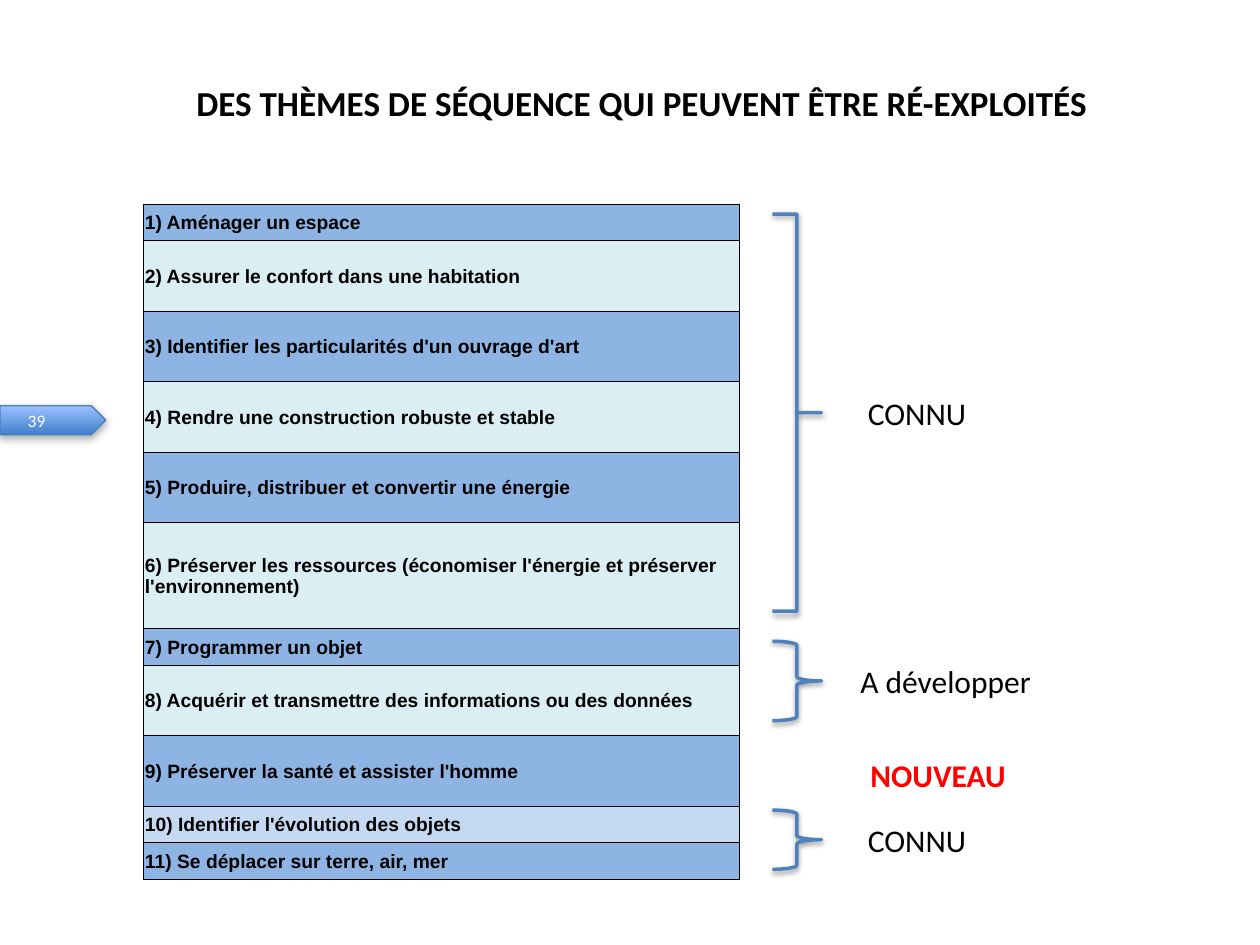
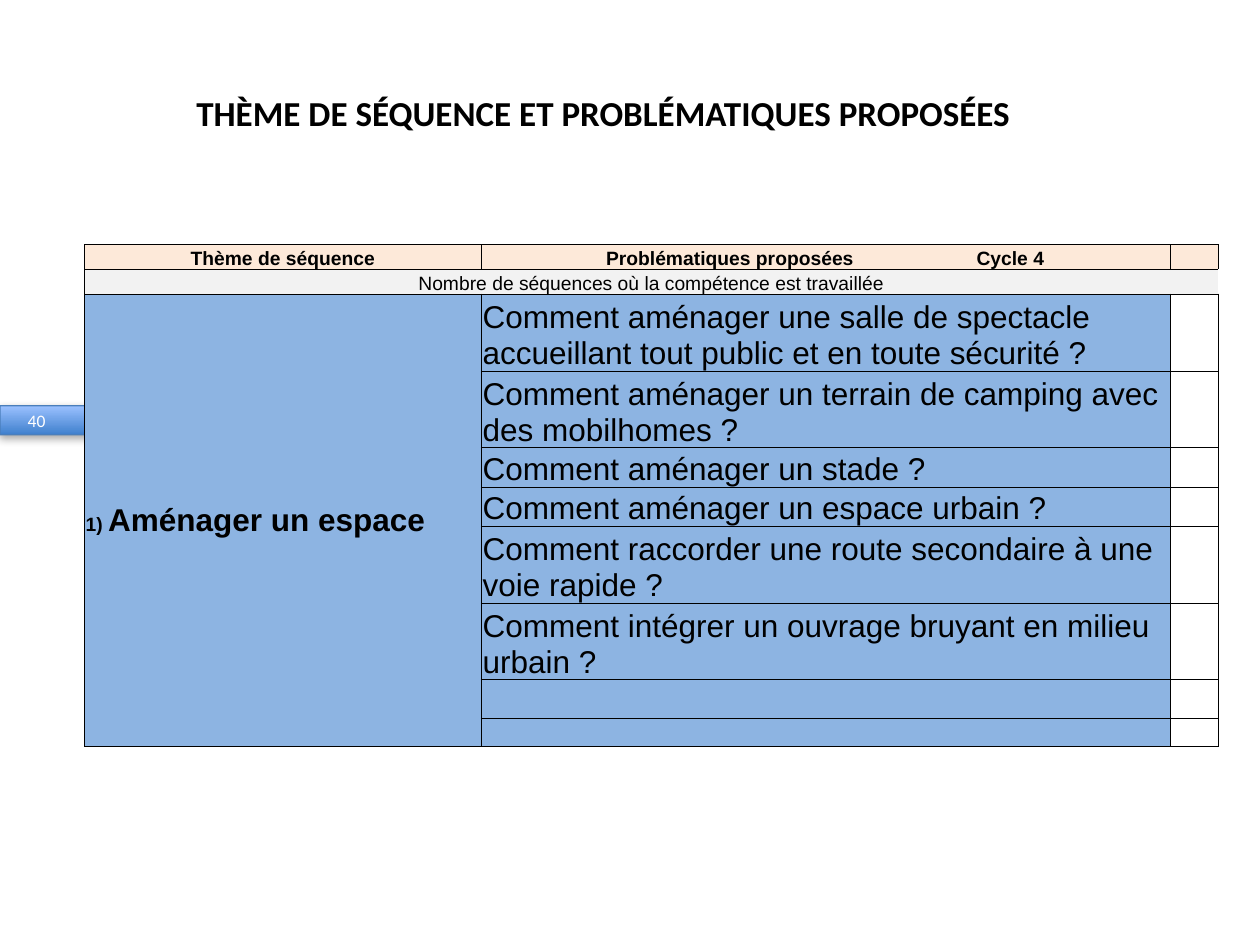
from dataclasses import dataclass

from lxml import etree
from pptx import Presentation
from pptx import util as u
from pptx.dml.color import RGBColor
from pptx.enum import shapes, text
from pptx.oxml import ns

# Grid: 100 columns by 75 rows, square cells
COLUMNS, ROWS = 100, 75
WIDTH, HEIGHT = u.Inches(10), u.Inches(7.5)
COLUMN, ROW = WIDTH / COLUMNS, HEIGHT / ROWS

BLACK = RGBColor(0x00, 0x00, 0x00)
WHITE = RGBColor(0xFF, 0xFF, 0xFF)
RED = RGBColor(0xFF, 0x00, 0x00)
BLUE = RGBColor(0x8D, 0xB4, 0xE2)
PALE_BLUE = RGBColor(0xC5, 0xD9, 0xF1)
AQUA = RGBColor(0xDA, 0xEE, 0xF3)
PEACH = RGBColor(0xFD, 0xE9, 0xD9)
GREY = RGBColor(0xF2, 0xF2, 0xF2)
BRACE_BLUE = RGBColor(0x4F, 0x81, 0xBD)
TAG_LINE = RGBColor(0x4A, 0x7E, 0xBB)
TAG_DARK = RGBColor(0x3F, 0x80, 0xCD)
TAG_LIGHT = RGBColor(0x9B, 0xC1, 0xFF)

HEADING_FONT, TABLE_FONT = "Calibri", "Arial"
SMALL, LARGE = 11, 18
MIDDLE, BOTTOM = text.MSO_ANCHOR.MIDDLE, text.MSO_ANCHOR.BOTTOM
CENTER = text.PP_ALIGN.CENTER

THEMES = [
    # wording, height in rows, fill
    ("1) Aménager un espace", 2.9, BLUE),
    ("2) Assurer le confort dans une habitation", 5.6, AQUA),
    ("3) Identifier les particularités d'un ouvrage d'art", 5.6, BLUE),
    ("4) Rendre une construction robuste et stable", 5.6, AQUA),
    ("5) Produire, distribuer et convertir une énergie", 5.6, BLUE),
    ("6) Préserver les ressources (économiser l'énergie et préserver "
     "l'environnement)", 8.4, AQUA),
    ("7) Programmer un objet", 2.9, BLUE),
    ("8) Acquérir et transmettre des informations ou des données", 5.6, AQUA),
    ("9) Préserver la santé et assister l'homme", 5.6, BLUE),
    ("10) Identifier l'évolution des objets", 2.9, PALE_BLUE),
    ("11) Se déplacer sur terre, air, mer", 2.9, BLUE),
]
GROUPS = [
    # label, label left, brace top, brace height, brace curl
    ("CONNU", 6.6, 0.8, 31.5, 0),
    ("A développer", 6, 34.7, 6.3, 0.083),
    ("CONNU", 6.6, 48.1, 4.7, 0.083),
]
QUESTIONS = [
    # wording, height in rows
    ("Comment aménager une salle de spectacle accueillant tout public "
     "et en toute sécurité ?", 6.1),
    ("Comment aménager un terrain de camping avec des mobilhomes ?", 6.1),
    ("Comment aménager un stade ?", 3.1),
    ("Comment aménager un espace urbain ?", 3.1),
    ("Comment raccorder une route secondaire à une voie rapide ?", 6.1),
    ("Comment intégrer un ouvrage bruyant en milieu urbain ?", 6.1),
    ("", 3.1),
    ("", 2.2),
]


@dataclass
class Box:
    left: float
    top: float
    width: float
    height: float

    def inner(self, left, top, width, height):
        return Box(self.left + left, self.top + top, width, height)

    def lengths(self):
        return (u.Emu(int(self.left * COLUMN)), u.Emu(int(self.top * ROW)),
                u.Emu(int(self.width * COLUMN)), u.Emu(int(self.height * ROW)))


def add_span(para, wording, size, font=TABLE_FONT, color=BLACK, bold=False):
    span = para.add_run()
    span.text = wording
    span.font.size = u.Pt(size)
    span.font.name = font
    span.font.bold = bold
    span.font.color.rgb = color


def add_text(page, box, wording, size, color=BLACK, bold=False, grow=False):
    frame = page.shapes.add_textbox(*box.lengths()).text_frame
    frame.word_wrap = True
    if grow:
        frame.auto_size = text.MSO_AUTO_SIZE.SHAPE_TO_FIT_TEXT
    add_span(frame.paragraphs[0], wording, size, HEADING_FONT, color, bold)


def add_shadow(shape, opacity, blur, distance):
    shape.shadow.inherit = False
    effects = shape._element.spPr.find(ns.qn("a:effectLst"))
    shadow = etree.SubElement(
        effects, ns.qn("a:outerShdw"), blurRad=str(u.Pt(blur)),
        dist=str(u.Pt(distance)), dir="5400000", rotWithShape="0")
    tint = etree.SubElement(shadow, ns.qn("a:srgbClr"), val=str(BLACK))
    etree.SubElement(tint, ns.qn("a:alpha"), val=str(opacity * 1000))


# Tables
def add_grid(page, box, widths, heights):
    table = page.shapes.add_table(len(heights), len(widths),
                                  *box.lengths()).table
    table.first_row = table.horz_banding = False
    for column, width in zip(table.columns, widths):
        column.width = u.Emu(int(width * COLUMN))
    for row, height in zip(table.rows, heights):
        row.height = u.Emu(int(height * ROW))
    return table


def style_cell(cell, fill=None, spans=(), anchor=MIDDLE, align=None,
               sides="LRTB"):
    """Each span is (wording, size, bold)."""
    cell.margin_left = cell.margin_right = cell.margin_top = u.Inches(0.01)
    cell.margin_bottom = 0
    cell.vertical_anchor = anchor
    para = cell.text_frame.paragraphs[0]
    if align is not None:
        para.alignment = align
    for wording, size, bold in spans:
        add_span(para, wording, size, bold=bold)
    if not spans:  # keeps empty rows low
        etree.SubElement(para._p, ns.qn("a:endParaRPr"), sz=str(SMALL * 100))
    properties = cell._tc.get_or_add_tcPr()
    for side in sides:
        line = etree.SubElement(properties, ns.qn(f"a:ln{side}"),
                                w=str(u.Pt(0.5)))
        solid = etree.SubElement(line, ns.qn("a:solidFill"))
        etree.SubElement(solid, ns.qn("a:srgbClr"), val=str(BLACK))
    if fill is None:
        cell.fill.background()
    else:
        cell.fill.solid()
        cell.fill.fore_color.rgb = fill


# Parts shared by both slides
def add_page_tag(page, box, number):
    tag = page.shapes.add_shape(shapes.MSO_SHAPE.PENTAGON, *box.lengths())
    tag.fill.gradient()
    tag.fill.gradient_angle = 90
    for stop, color in zip(tag.fill.gradient_stops, (TAG_DARK, TAG_LIGHT)):
        stop.color.rgb = color
    tag.line.color.rgb = TAG_LINE
    tag.line.width = u.Pt(0.75)
    add_shadow(tag, 35, 5, 1.8)
    frame = tag.text_frame
    frame.margin_left = u.Inches(0.22)
    frame.margin_top = frame.margin_bottom = 0
    frame.vertical_anchor = MIDDLE
    para = frame.paragraphs[0]
    para.alignment = text.PP_ALIGN.LEFT
    add_span(para, str(number), 10, HEADING_FONT, WHITE)


def start_page(deck, number, title, title_box):
    page = deck.slides.add_slide(deck.slide_layouts[6])
    add_page_tag(page, Box(0, 32.2, 8.4, 2.3), number)
    add_text(page, title_box, title, 20, bold=True)
    return page


# First slide
def list_themes(page, box):
    table = add_grid(page, box, [box.width], [row[1] for row in THEMES])
    for index, (wording, _, fill) in enumerate(THEMES):
        style_cell(table.cell(index, 0), fill, [(wording, SMALL, True)])


def label_groups(page, box):
    label_height = 4
    for label, left, top, height, curl in GROUPS:
        brace = page.shapes.add_shape(shapes.MSO_SHAPE.RIGHT_BRACE,
                                      *box.inner(0, top, 3.9, height).lengths())
        brace.adjustments[0] = curl
        brace.adjustments[1] = 0.5
        brace.fill.background()
        brace.line.color.rgb = BRACE_BLUE
        brace.line.width = u.Pt(2)
        add_shadow(brace, 38, 3.1, 1.6)
        label_top = top + (height - label_height) / 2
        add_text(page, box.inner(left, label_top, 23.6, label_height),
                 label, LARGE, grow=True)
    add_text(page, box.inner(6.8, 43.3, 28.1, label_height),
             "NOUVEAU", LARGE, RED, bold=True, grow=True)


# Second slide
def list_questions(page, box):
    widths = [31.5, 54.7, 3.8]
    heights = [2, 1.9] + [height for _, height in QUESTIONS]
    table = add_grid(page, box, widths, heights)

    # Heading row, with the cycle set at a tab stop
    style_cell(table.cell(0, 0), PEACH, [("Thème de séquence", SMALL, True)],
               BOTTOM, CENTER)
    heading = table.cell(0, 1)
    para = heading.text_frame.paragraphs[0]
    stops = etree.SubElement(para._p.get_or_add_pPr(), ns.qn("a:tabLst"))
    etree.SubElement(stops, ns.qn("a:tab"), pos=str(u.Inches(2.94)), algn="l")
    style_cell(heading, PEACH,
               [("Problématiques proposées\tCycle 4", SMALL, True)], BOTTOM)
    heading.margin_left = u.Inches(0.99)
    style_cell(table.cell(0, 2), PEACH)

    # Band across the three columns
    table.cell(1, 0).merge(table.cell(1, 2))
    style_cell(table.cell(1, 0), GREY,
               [("Nombre de séquences où la compétence est travaillée",
                 SMALL, False)], BOTTOM, CENTER, "LTB")
    for column in (1, 2):
        style_cell(table.cell(1, column), GREY, sides="TB")

    # Theme beside its questions
    last = len(heights) - 1
    table.cell(2, 0).merge(table.cell(last, 0))
    style_cell(table.cell(2, 0), BLUE,
               [("1) ", SMALL, True), ("Aménager un espace", LARGE, True)])
    for index, (wording, _) in enumerate(QUESTIONS, start=2):
        if index > 2:
            style_cell(table.cell(index, 0), BLUE,
                       sides="LRB" if index == last else "LR")
        spans = [(wording, LARGE, False)] if wording else []
        style_cell(table.cell(index, 1), BLUE, spans, BOTTOM)
        style_cell(table.cell(index, 2))


def main():
    deck = Presentation()
    deck.slide_width, deck.slide_height = WIDTH, HEIGHT

    page = start_page(deck, 39,
                      "DES THÈMES DE SÉQUENCE QUI PEUVENT ÊTRE RÉ-EXPLOITÉS",
                      Box(14.6, 6, 80.3, 7.9))
    list_themes(page, Box(11.4, 16.2, 47.3, 53.5))
    label_groups(page, Box(61.3, 16.2, 34.9, 53.5))

    page = start_page(deck, 40,
                      "THÈME DE SÉQUENCE ET PROBLÉMATIQUES PROPOSÉES",
                      Box(14.6, 6.8, 71.4, 7.9))
    list_questions(page, Box(6.7, 19.4, 90, 39.9))

    deck.save("out.pptx")


if __name__ == "__main__":
    main()
